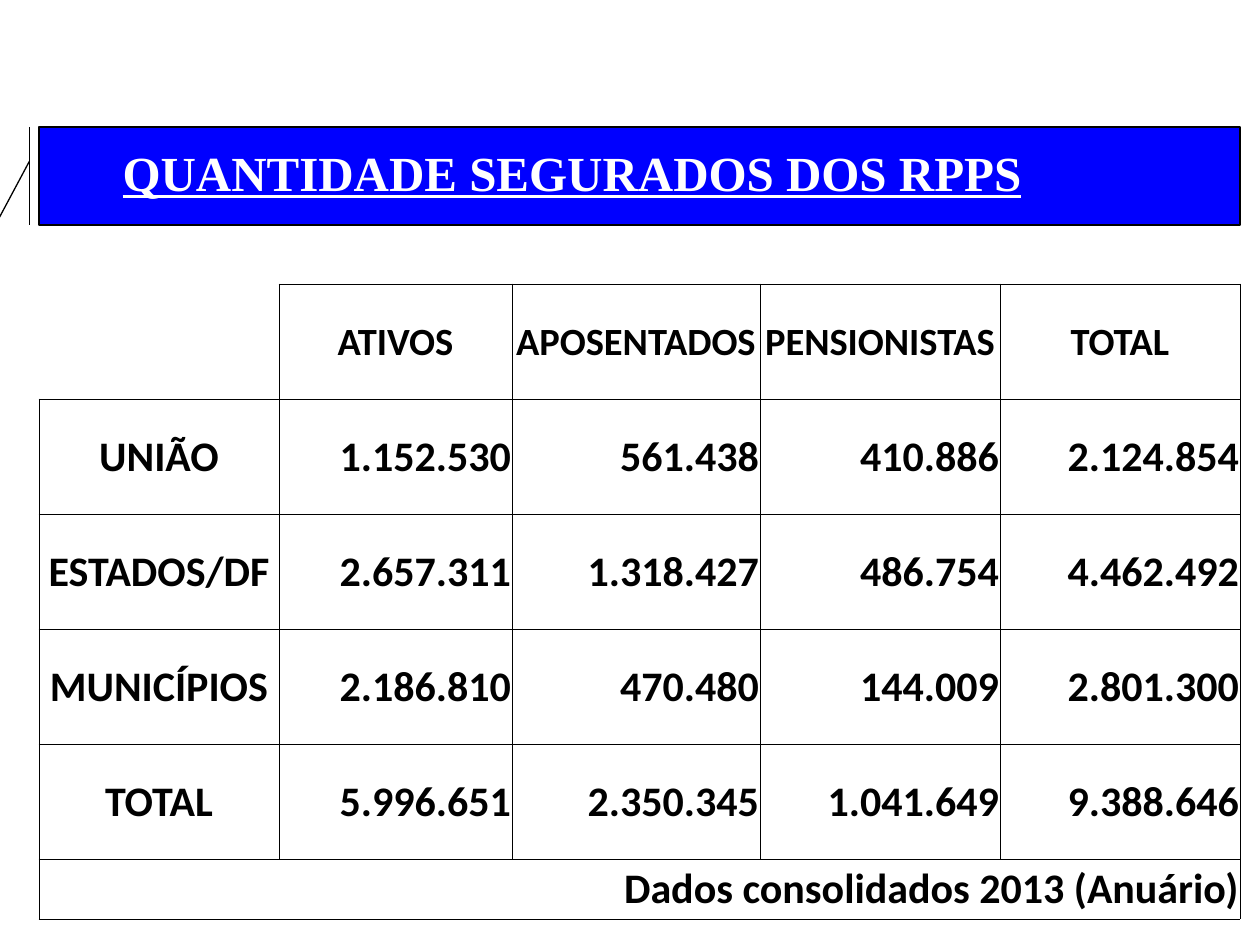
"""Build the slide on the number of people insured by the RPPS."""
from lxml import etree
from pptx import Presentation
from pptx.dml.color import RGBColor
from pptx.enum.shapes import MSO_SHAPE
from pptx.enum.text import MSO_ANCHOR, MSO_AUTO_SIZE, PP_ALIGN
from pptx.oxml.ns import qn
from pptx.util import Pt

CALLOUT = MSO_SHAPE.LINE_CALLOUT_1_BORDER_AND_ACCENT_BAR
TOP, MIDDLE = MSO_ANCHOR.TOP, MSO_ANCHOR.MIDDLE
LEFT, CENTER, RIGHT = PP_ALIGN.LEFT, PP_ALIGN.CENTER, PP_ALIGN.RIGHT
NO_AUTO_SIZE = MSO_AUTO_SIZE.NONE

TITLE = "QUANTIDADE SEGURADOS DOS RPPS"
ROWS = [
    ["", "ATIVOS", "APOSENTADOS", "PENSIONISTAS", "TOTAL"],
    ["UNIÃO", "1.152.530", "561.438", "410.886", "2.124.854"],
    ["ESTADOS/DF", "2.657.311", "1.318.427", "486.754", "4.462.492"],
    ["MUNICÍPIOS", "2.186.810", "470.480", "144.009", "2.801.300"],
    ["TOTAL", "5.996.651", "2.350.345", "1.041.649", "9.388.646"],
    ["Dados consolidados 2013 (Anuário)", "", "", "", ""],
]
COLUMN_WIDTHS = [240, 233, 248, 240, 240]
ROW_HEIGHTS = [115] * 5 + [60]
MARGIN_LEFT = 39
BLACK, WHITE, BLUE = "000000", "FFFFFF", "0000FF"


def px(length):
    return round(length * 914400 / 126)


def color(value):
    return RGBColor.from_string(value)


def set_font(font, name, size, value):
    font.name, font.size, font.bold = name, Pt(size), True
    font.color.rgb = color(value)


def set_borders(cell, visible_sides):
    properties = cell._tc.get_or_add_tcPr()
    for side in "LRTB":
        line = etree.SubElement(properties, qn(f"a:ln{side}"), w=str(Pt(0.5)))
        if side in visible_sides:
            fill = etree.SubElement(line, qn("a:solidFill"))
            etree.SubElement(fill, qn("a:srgbClr"), val=BLACK)
        else:
            etree.SubElement(line, qn("a:noFill"))


def add_title(slide):
    title = slide.shapes.title
    title.left, title.top, title.width, title.height = map(px, (110, 132, 1076, 102))
    frame = title.text_frame
    frame.text = TITLE
    frame.auto_size = NO_AUTO_SIZE
    frame.vertical_anchor = TOP
    frame.margin_top = px(10)
    paragraph = frame.paragraphs[0]
    paragraph.alignment = LEFT
    set_font(paragraph.font, "Times New Roman", 28, WHITE)
    paragraph.font.underline = True

    banner = slide.shapes.add_shape(
        CALLOUT, px(MARGIN_LEFT), px(127), px(sum(COLUMN_WIDTHS)), px(98))
    for index, value in enumerate((0.35, -0.008, 1.13, -0.042)):
        banner.adjustments[index] = value
    banner.shadow.inherit = False
    banner.fill.solid()
    banner.fill.fore_color.rgb = color(BLUE)
    banner.line.color.rgb = color(BLACK)
    banner.line.width = Pt(0.75)
    title.element.addprevious(banner.element)


def fill_cell(cell, text, row, column):
    is_corner = row == column == 0
    set_borders(cell, "RB" if is_corner else "LRTB")
    if is_corner:
        cell.fill.background()
    else:
        cell.fill.solid()
        cell.fill.fore_color.rgb = color(WHITE)
    cell.margin_left = cell.margin_top = cell.margin_right = px(1)
    cell.margin_bottom = 0
    cell.vertical_anchor = MIDDLE
    cell.text = text
    is_label = row == 0 or (column == 0 and row < len(ROWS) - 1)
    paragraph = cell.text_frame.paragraphs[0]
    paragraph.alignment = CENTER if is_label else RIGHT
    set_font(paragraph.font, "Calibri", 22 if row == 0 else 24, BLACK)


def add_insured_table(slide):
    table = slide.shapes.add_table(
        len(ROWS), len(COLUMN_WIDTHS), px(MARGIN_LEFT), px(284),
        px(sum(COLUMN_WIDTHS)), px(sum(ROW_HEIGHTS))).table
    table.first_row = table.horz_banding = False
    for column, width in zip(table.columns, COLUMN_WIDTHS):
        column.width = px(width)
    for row, height in zip(table.rows, ROW_HEIGHTS):
        row.height = px(height)
    for row, texts in enumerate(ROWS):
        for column, text in enumerate(texts):
            fill_cell(table.cell(row, column), text, row, column)
    last_row = len(ROWS) - 1
    table.cell(last_row, 0).merge(table.cell(last_row, len(COLUMN_WIDTHS) - 1))


def main():
    presentation = Presentation()
    presentation.slide_width, presentation.slide_height = px(1260), px(945)
    slide = presentation.slides.add_slide(presentation.slide_layouts[5])
    add_title(slide)
    add_insured_table(slide)
    presentation.save("out.pptx")


if __name__ == "__main__":
    main()
